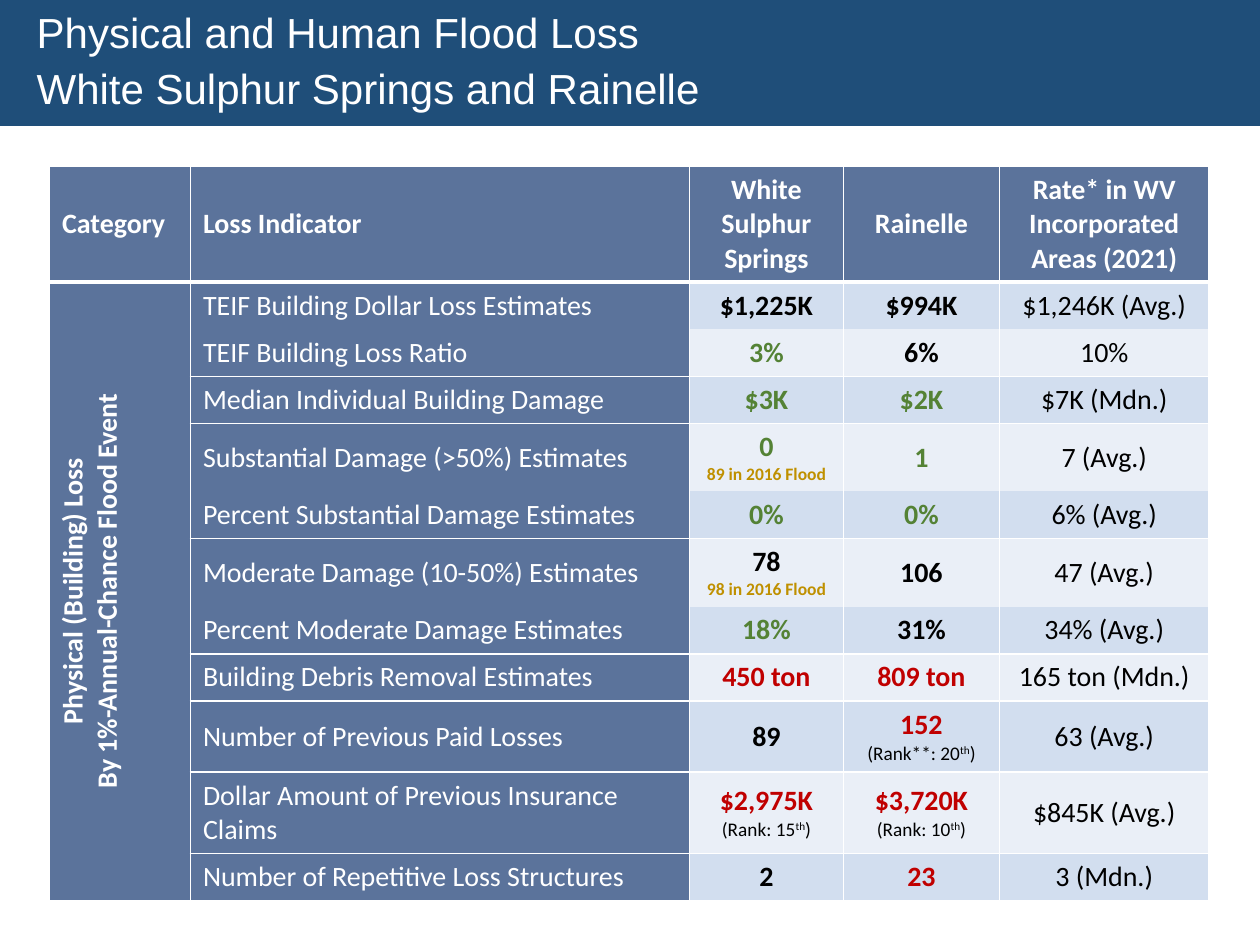
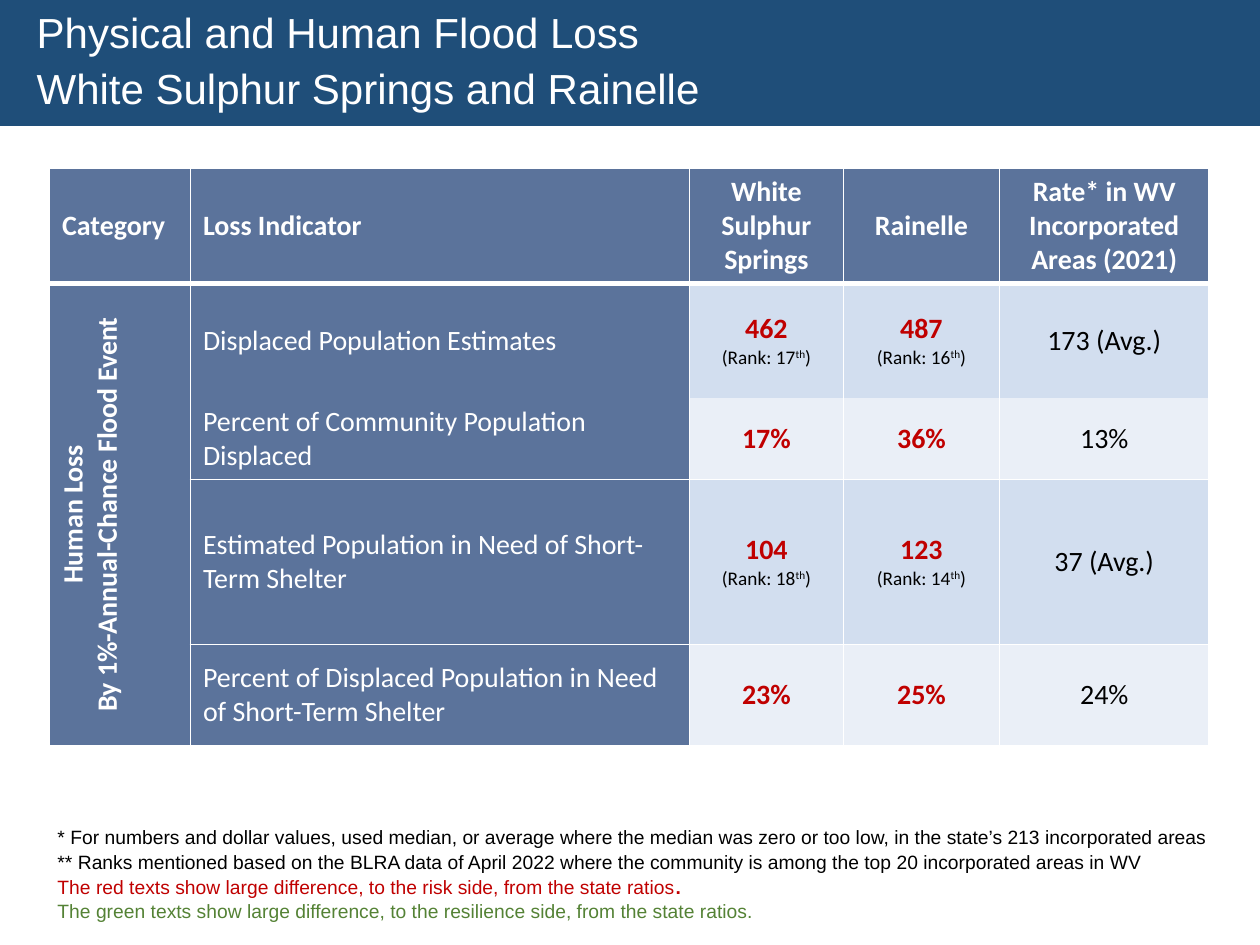
from dataclasses import dataclass
from lxml.etree import SubElement
from pptx import Presentation
from pptx.dml.color import RGBColor
from pptx.enum.shapes import MSO_SHAPE as Preset
from pptx.enum.text import MSO_ANCHOR as Anchor, PP_ALIGN as Align
from pptx.oxml.ns import qn
from pptx.util import Cm, Pt


@dataclass(frozen=True)
class Theme:
    band: str = "1F4E79"
    header: str = "5B739B"
    stripes: tuple = ("D2DEEF", "EAEFF7")
    white: str = "FFFFFF"
    plain: str = "000000"
    risk: str = "C00000"
    resilient: str = "548235"
    flood: str = "BF9000"
    title_font: str = "Arial"
    table_font: str = "Calibri"
    title_size: int = 24
    table_size: int = 16
    note_size: int = 11
    flood_size: int = 10


THEME = Theme()


@dataclass(frozen=True)
class Figure:
    text: str
    color: str = THEME.plain
    rank: str = ""
    flood: str = ""


def risk(text, rank=""):
    return Figure(text, THEME.risk, rank)


def good(text, flood=""):
    return Figure(text, THEME.resilient, flood=flood)


TITLE = ("Physical and Human Flood Loss", "White Sulphur Springs and Rainelle")
HEADINGS = ("Category", "Loss Indicator", "White Sulphur Springs", "Rainelle",
            "Rate* in WV Incorporated Areas (2021)")
EVENT = "By 1%-Annual-Chance Flood Event"
COLUMN_WIDTHS = (2.84, 10.06, 3.1, 3.15, 4.22)
HEADER_HEIGHT = 2.32
LINE, NOTED, RANKED, WRAPPED = 0.95, 1.35, 1.43, 1.64

PHYSICAL_LOSS = (
    (LINE, "TEIF Building Dollar Loss Estimates", Figure("$1,225K"), Figure("$994K"), "$1,246K (Avg.)"),
    (LINE, "TEIF Building Loss Ratio", good("3%"), Figure("6%"), "10%"),
    (LINE, "Median Individual Building Damage", good("$3K"), good("$2K"), "$7K (Mdn.)"),
    (NOTED, "Substantial Damage (>50%) Estimates", good("0", "89 in 2016 Flood"), good("1"), "7 (Avg.)"),
    (LINE, "Percent Substantial Damage Estimates", good("0%"), good("0%"), "6% (Avg.)"),
    (NOTED, "Moderate Damage (10-50%) Estimates", Figure("78", flood="98 in 2016 Flood"), Figure("106"),
     "47 (Avg.)"),
    (LINE, "Percent Moderate Damage Estimates", good("18%"), Figure("31%"), "34% (Avg.)"),
    (LINE, "Building Debris Removal Estimates", risk("450 ton"), risk("809 ton"), "165 ton (Mdn.)"),
    (RANKED, "Number of Previous Paid Losses", Figure("89"), risk("152", "Rank**: 20"), "63 (Avg.)"),
    (WRAPPED, "Dollar Amount of Previous Insurance Claims", risk("$2,975K", "Rank: 15"),
     risk("$3,720K", "Rank: 10"), "$845K (Avg.)"),
    (LINE, "Number of Repetitive Loss Structures", Figure("2"), risk("23"), "3 (Mdn.)"),
)
HUMAN_LOSS = (
    (2.31, "Displaced Population Estimates", risk("462", "Rank: 17"), risk("487", "Rank: 16"), "173 (Avg.)"),
    (WRAPPED, "Percent of Community Population Displaced", risk("17%"), risk("36%"), "13%"),
    (3.33, "Estimated Population in Need of Short-Term Shelter", risk("104", "Rank: 18"),
     risk("123", "Rank: 14"), "37 (Avg.)"),
    (2.03, "Percent of Displaced Population in Need of Short-Term Shelter", risk("23%"), risk("25%"), "24%"),
)
FOOTNOTES = (
    ("* For numbers and dollar values, used median, or average where the median was zero or too low, "
     "in the state’s 213 incorporated areas", THEME.plain, ""),
    ("** Ranks mentioned based on the BLRA data of April 2022 where the community is among the top 20 "
     "incorporated areas in WV", THEME.plain, ""),
    ("The red texts show large difference, to the risk side, from the state ratios", THEME.risk, "."),
    ("The green texts show large difference, to the resilience side, from the state ratios.",
     THEME.resilient, ""),
)


class Deck:
    def __init__(self, theme):
        self.theme = theme
        self.presentation = Presentation()
        self.presentation.slide_width = Cm(25.4)
        self.presentation.slide_height = Cm(19.05)
        self.slide = None

    def add_slide(self):
        self.slide = self.presentation.slides.add_slide(self.presentation.slide_layouts[6])
        self.title_band()

    def run(self, paragraph, text, size, color, bold=False, font=None, raised=False):
        run = paragraph.add_run()
        run.text = text
        run.font.name = font or self.theme.table_font
        run.font.size = Pt(size)
        run.font.bold = bold
        run.font.color.rgb = RGBColor.from_string(color)
        if raised:
            run.font._element.set("baseline", "30000")

    def paragraph(self, frame, position, align=Align.LEFT):
        paragraph = frame.add_paragraph() if position else frame.paragraphs[0]
        paragraph.alignment = align
        return paragraph

    def title_band(self):
        theme = self.theme
        band = self.slide.shapes.add_shape(Preset.RECTANGLE, 0, 0, Cm(25.4), Cm(2.54))
        band.shadow.inherit = False
        band.fill.solid()
        band.fill.fore_color.rgb = RGBColor.from_string(theme.band)
        band.line.fill.background()
        frame = band.text_frame
        frame.margin_left = Cm(0.74)
        frame.vertical_anchor = Anchor.MIDDLE
        for position, line in enumerate(TITLE):
            paragraph = self.paragraph(frame, position)
            paragraph.line_spacing = 0.9
            paragraph.space_before = Pt(6 * position)
            self.run(paragraph, line, theme.title_size, theme.white, font=theme.title_font)

    def borders(self, cell, top, bottom):
        properties = cell._tc.get_or_add_tcPr()
        for side, width in (("L", 1), ("R", 1), ("T", top), ("B", bottom)):
            line = SubElement(properties, qn(f"a:ln{side}"), w=str(Pt(width)))
            if width:
                fill = SubElement(line, qn("a:solidFill"))
                SubElement(fill, qn("a:srgbClr"), val=self.theme.white)
            else:
                SubElement(line, qn("a:noFill"))

    def style_cell(self, cell, color, top=1, bottom=1):
        self.borders(cell, top, bottom)
        cell.fill.solid()
        cell.fill.fore_color.rgb = RGBColor.from_string(color)
        cell.vertical_anchor = Anchor.MIDDLE

    def label(self, cell, lines, bold=False, align=Align.LEFT, color=None):
        for position, line in enumerate(lines):
            paragraph = self.paragraph(cell.text_frame, position, align)
            self.run(paragraph, line, self.theme.table_size, color or self.theme.white, bold)

    def figure(self, cell, figure):
        theme = self.theme
        self.label(cell, [figure.text], True, Align.CENTER, figure.color)
        if figure.rank:
            paragraph = self.paragraph(cell.text_frame, 1, Align.CENTER)
            for text, raised in ((f"({figure.rank}", False), ("th", True), (")", False)):
                self.run(paragraph, text, theme.note_size, theme.plain, raised=raised)
        if figure.flood:
            paragraph = self.paragraph(cell.text_frame, 1, Align.CENTER)
            self.run(paragraph, figure.flood, theme.flood_size, theme.flood, True)

    def loss_table(self, top, category, indicators, joined):
        theme = self.theme
        heights = [HEADER_HEIGHT] + [indicator[0] for indicator in indicators]
        table = self.slide.shapes.add_table(
            len(heights), len(COLUMN_WIDTHS), Cm(1), Cm(top),
            Cm(sum(COLUMN_WIDTHS)), Cm(sum(heights))).table
        for column, width in zip(table.columns, COLUMN_WIDTHS):
            column.width = Cm(width)
        for row, height in zip(table.rows, heights):
            row.height = Cm(height)
        for column, heading in enumerate(HEADINGS):
            cell = table.cell(0, column)
            self.style_cell(cell, theme.header, bottom=3)
            self.label(cell, [heading], True, Align.CENTER if column > 1 else Align.LEFT)
        for row, (_, name, springs, rainelle, rate) in enumerate(indicators, 1):
            above = 3 if row == 1 else int(row - 1 not in joined)
            below = int(row not in joined)
            for column in range(len(HEADINGS)):
                color = theme.header if column < 2 else theme.stripes[(row - 1) % 2]
                self.style_cell(table.cell(row, column), color, above, below)
            self.label(table.cell(row, 1), [name])
            self.figure(table.cell(row, 2), springs)
            self.figure(table.cell(row, 3), rainelle)
            self.label(table.cell(row, 4), [rate], align=Align.CENTER, color=theme.plain)
        side = table.cell(1, 0)
        side.merge(table.cell(len(indicators), 0))
        side._tc.get_or_add_tcPr().set("vert", "vert270")
        self.label(side, [category, EVENT], True, Align.CENTER)

    def footnotes(self):
        theme = self.theme
        box = self.slide.shapes.add_textbox(Cm(0.91), Cm(16.51), Cm(24.49), Cm(2.5))
        box.text_frame.word_wrap = True
        for position, (text, color, ending) in enumerate(FOOTNOTES):
            paragraph = self.paragraph(box.text_frame, position)
            paragraph.space_before = Pt(1)
            self.run(paragraph, text, theme.note_size, color, font=theme.title_font)
            if ending:
                self.run(paragraph, ending, theme.note_size, color, True, theme.title_font)


def main():
    deck = Deck(THEME)
    deck.add_slide()
    deck.loss_table(3.36, "Physical (Building) Loss", PHYSICAL_LOSS, {1, 4, 6})
    deck.add_slide()
    deck.loss_table(3.39, "Human Loss", HUMAN_LOSS, {1})
    deck.footnotes()
    deck.presentation.save("out.pptx")


if __name__ == "__main__":
    main()
